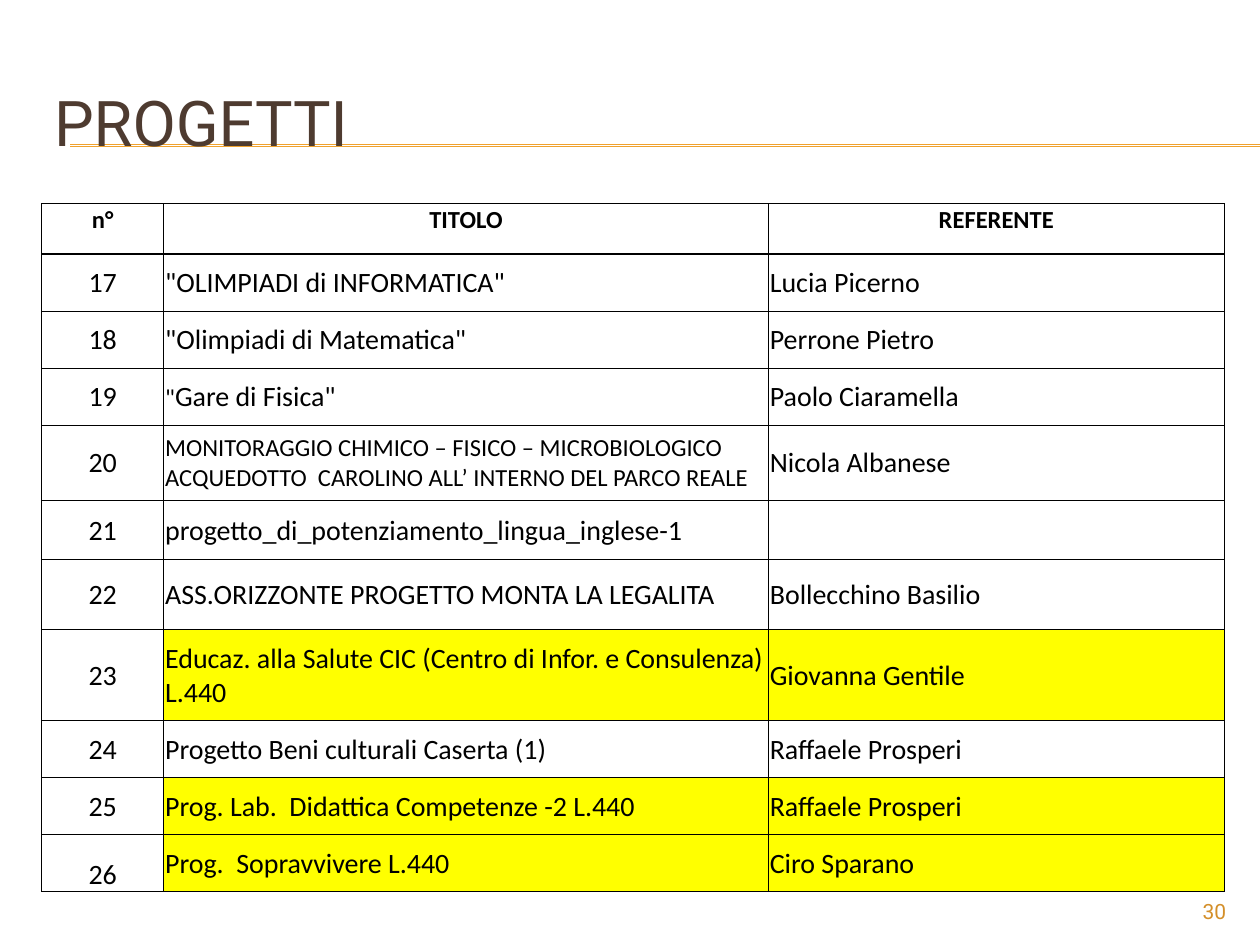
from lxml import etree
from pptx import Presentation
from pptx.dml.color import RGBColor
from pptx.enum.shapes import MSO_CONNECTOR
from pptx.enum.text import MSO_ANCHOR, PP_ALIGN
from pptx.oxml.ns import qn
from pptx.util import Cm, Pt

LEFT, CENTER, RIGHT = PP_ALIGN.LEFT, PP_ALIGN.CENTER, PP_ALIGN.RIGHT
TOP, MIDDLE, BOTTOM = MSO_ANCHOR.TOP, MSO_ANCHOR.MIDDLE, MSO_ANCHOR.BOTTOM
STRAIGHT = MSO_CONNECTOR.STRAIGHT

COLORS = {
    "rule": "F0A22E",
    "title": "4E3B30",
    "number": "D48F29",
    "text": "000000",
    "mark": "FFFF00",
}
TITLE = {"name": "Roboto", "size": Pt(36)}
NUMBER = {"name": "Roboto", "size": Pt(12)}
HEAD = {"name": "Calibri", "size": Pt(14), "bold": True}
BODY = {"name": "Calibri", "size": Pt(16)}
SMALL = {"name": "Calibri", "size": Pt(14)}

TABLE_LEFT = 0.84
COLUMNS = [2.46, 12.19, 9.19]
FIRST_NUMBER = 17
MARKED = {23, 25, 26}

# Row height, title runs, contact person
PROJECTS = [
    (1.15, [('"OLIMPIADI di INFORMATICA"', BODY)], "Lucia Picerno"),
    (1.15, [('"Olimpiadi di Matematica"', BODY)], "Perrone Pietro"),
    (1.15, [('"', SMALL), ('Gare di Fisica"', BODY)], "Paolo Ciaramella"),
    (1.52, [("MONITORAGGIO CHIMICO – FISICO – MICROBIOLOGICO "
             "ACQUEDOTTO  CAROLINO ALL’ INTERNO DEL PARCO REALE", SMALL)],
     "Nicola Albanese"),
    (1.19, [("progetto_di_potenziamento_lingua_inglese-1", BODY)], ""),
    (1.42, [("ASS.ORIZZONTE PROGETTO MONTA LA LEGALITA", BODY)],
     "Bollecchino Basilio"),
    (1.83, [("Educaz. alla Salute CIC (Centro di Infor. e Consulenza) L.440",
             BODY)], "Giovanna Gentile"),
    (1.15, [("Progetto Beni culturali Caserta (1)", BODY)],
     "Raffaele Prosperi"),
    (1.15, [("Prog. Lab.  Didattica Competenze -2 L.440", BODY)],
     "Raffaele Prosperi"),
    (1.15, [("Prog.  Sopravvivere L.440", BODY)], "Ciro Sparano"),
]


class SlideBuilder:
    def __init__(self, slide, colors):
        self.s = slide
        self.colors = colors

    def color(self, key):
        return RGBColor.from_string(self.colors[key])

    def add_runs(self, tf, runs, align, color):
        p = tf.paragraphs[0]
        p.alignment = align
        for text, style in runs:
            r = p.add_run()
            r.text = text
            for key, value in style.items():
                setattr(r.font, key, value)
            r.font.color.rgb = self.color(color)

    def line(self, x1, y1, x2, y2, color):
        c = self.s.shapes.add_connector(STRAIGHT, Cm(x1), Cm(y1), Cm(x2), Cm(y2))
        c.line.color.rgb = self.color(color)
        c.line.width = Pt(0.75)
        etree.SubElement(c._element.spPr, qn("a:effectLst"))

    def text(self, x, y, w, h, runs, color, align=LEFT, anchor=TOP):
        sp = self.s.shapes.add_textbox(Cm(x), Cm(y), Cm(w), Cm(h))
        tf = sp.text_frame
        tf.word_wrap = True
        tf.vertical_anchor = anchor
        self.add_runs(tf, runs, align, color)

    def table(self, x, y, widths, heights):
        frame = self.s.shapes.add_table(
            len(heights), len(widths), Cm(x), Cm(y),
            Cm(sum(widths)), Cm(sum(heights)))
        table = frame.table
        table.first_row = table.horz_banding = False
        for column, width in zip(table.columns, widths):
            column.width = Cm(width)
        for row, height in zip(table.rows, heights):
            row.height = Cm(height)
        return table

    def cell(self, cell, runs, align=LEFT, anchor=MIDDLE, fill=None):
        margins = {"margin_left": 0.03, "margin_right": 0.03,
                   "margin_top": 0.03, "margin_bottom": 0}
        for key, value in margins.items():
            setattr(cell, key, Cm(value))
        cell.vertical_anchor = anchor
        self.add_runs(cell.text_frame, runs, align, "text")
        self.borders(cell)
        if fill:
            cell.fill.solid()
            cell.fill.fore_color.rgb = self.color(fill)
        else:
            cell.fill.background()

    def borders(self, cell):
        tc_pr = cell._tc.get_or_add_tcPr()
        for side in ("lnL", "lnR", "lnT", "lnB"):
            ln = etree.SubElement(tc_pr, qn("a:" + side), w=str(Pt(0.5)))
            solid = etree.SubElement(ln, qn("a:solidFill"))
            etree.SubElement(solid, qn("a:srgbClr"), val=self.colors["text"])


def main():
    prs = Presentation()
    prs.slide_width, prs.slide_height = Cm(25.4), Cm(19.05)
    slide = SlideBuilder(prs.slides.add_slide(prs.slide_layouts[6]), COLORS)

    # Double rule and title
    for y in (2.92, 2.95):
        slide.line(1.42, y, 25.4, y, "rule")
    slide.text(0.84, 1.27, 24.13, 2.34, [("PROGETTI", TITLE)], "title",
               anchor=MIDDLE)

    # Project table
    table = slide.table(TABLE_LEFT, 5.12, COLUMNS, [row[0] for row in PROJECTS])
    last = FIRST_NUMBER + len(PROJECTS) - 1
    for i, (_, title, person) in enumerate(PROJECTS):
        number = FIRST_NUMBER + i
        fill = "mark" if number in MARKED else None
        slide.cell(table.cell(i, 0), [(str(number), BODY)], CENTER,
                   BOTTOM if number == last else MIDDLE)
        slide.cell(table.cell(i, 1), title, fill=fill)
        slide.cell(table.cell(i, 2), [(person, BODY)] if person else [],
                   fill=fill)

    # Page number
    slide.text(22.86, 17.98, 2.11, 0.69, [("30", NUMBER)], "number", RIGHT)

    # Header table
    header = slide.table(TABLE_LEFT, 4.11, COLUMNS, [1])
    for i, label in enumerate(("n°", "TITOLO", "REFERENTE")):
        slide.cell(header.cell(0, i), [(label, HEAD)], CENTER, TOP)

    prs.save("out.pptx")


if __name__ == "__main__":
    main()
